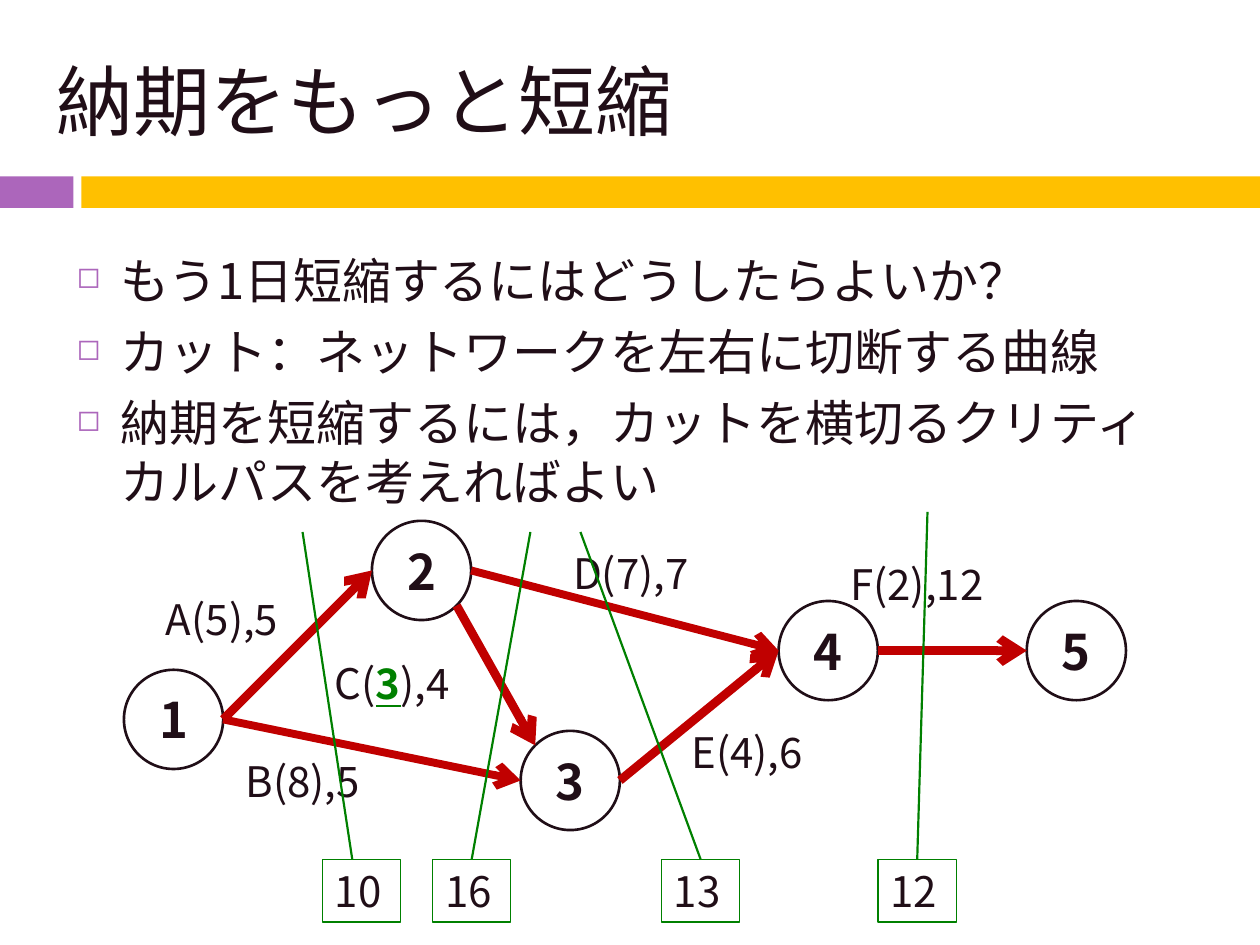
from math import cos, radians, sin

from lxml import etree
from pptx import Presentation
from pptx.dml.color import RGBColor
from pptx.enum.shapes import MSO_CONNECTOR, MSO_SHAPE
from pptx.enum.text import MSO_ANCHOR, MSO_AUTO_SIZE, PP_ALIGN
from pptx.oxml.ns import qn
from pptx.util import Pt

STRAIGHT = MSO_CONNECTOR.STRAIGHT
RECTANGLE, OVAL = MSO_SHAPE.RECTANGLE, MSO_SHAPE.OVAL
TOP, MIDDLE = MSO_ANCHOR.TOP, MSO_ANCHOR.MIDDLE
LEFT, CENTER = PP_ALIGN.LEFT, PP_ALIGN.CENTER
GROW = MSO_AUTO_SIZE.SHAPE_TO_FIT_TEXT

INK = RGBColor(0x20, 0x0E, 0x17)
PURPLE = RGBColor(0xAC, 0x66, 0xBB)
GOLD = RGBColor(0xFF, 0xC0, 0x00)
RED = RGBColor(0xC0, 0x00, 0x00)
GREEN = RGBColor(0x00, 0x80, 0x00)
FONT = "Noto Sans CJK JP"


def add_span(para, text, size, color=INK, **formats):
    span = para.add_run()
    span.text = text
    formats.update(name=FONT, size=Pt(size))
    for name, value in formats.items():
        setattr(span.font, name, value)
    span.font.color.rgb = color
    etree.SubElement(span.font._element, qn("a:ea"), typeface=FONT)


def add_line(start, end, color, width):
    line = page.shapes.add_connector(STRAIGHT, *(Pt(v) for v in (*start, *end)))
    line.line.color.rgb = color
    line.line.width = Pt(width)
    etree.SubElement(line._element.spPr, qn("a:effectLst"))
    return line


deck = Presentation()
deck.slide_width, deck.slide_height = Pt(720), Pt(540)
page = deck.slides.add_slide(deck.slide_layouts[6])

# Title and the band below it
for left, width, color in ((0, 42, PURPLE), (46.5, 673.5, GOLD)):
    band = page.shapes.add_shape(RECTANGLE, Pt(left), Pt(100.8), Pt(width), Pt(18))
    band.shadow.inherit = False
    band.fill.solid()
    band.fill.fore_color.rgb = color
    band.line.fill.background()

title = page.shapes.add_textbox(Pt(25.2), Pt(18), Pt(669), Pt(78)).text_frame
title.word_wrap = True
title.vertical_anchor = MIDDLE
add_span(title.paragraphs[0], "納期をもっと短縮", 44)

# Bullets
body = page.shapes.add_textbox(Pt(36.75), Pt(139.7), Pt(652.3), Pt(380)).text_frame
body.word_wrap = True
for index, text in enumerate((
    "もう1日短縮するにはどうしたらよいか？",
    "カット：ネットワークを左右に切断する曲線",
    "納期を短縮するには，カットを横切るクリティカルパスを考えればよい",
)):
    para = body.add_paragraph() if index else body.paragraphs[0]
    para.space_before = Pt(7)
    properties = para._p.get_or_add_pPr()
    properties.set("marL", str(Pt(25.2)))
    properties.set("indent", str(-Pt(25.2)))
    bullet_color = etree.SubElement(properties, qn("a:buClr"))
    etree.SubElement(bullet_color, qn("a:srgbClr"), val=str(PURPLE))
    etree.SubElement(properties, qn("a:buSzPct"), val="60000")
    etree.SubElement(properties, qn("a:buChar"), char="◻")
    add_span(para, text, 28)

# Network nodes, by centre
RADIUS = 28.35
NODES = {
    "1": (99.2, 411.1),
    "2": (240.9, 326),
    "3": (325.9, 446),
    "4": (473.3, 371.8),
    "5": (615.1, 371.8),
}
for name, (x, y) in NODES.items():
    node = page.shapes.add_shape(
        OVAL, Pt(x - RADIUS), Pt(y - RADIUS), Pt(2 * RADIUS), Pt(2 * RADIUS))
    node.shadow.inherit = False
    node.fill.background()
    node.line.color.rgb = INK
    node.line.width = Pt(1.5)
    node.text_frame.vertical_anchor = MIDDLE
    para = node.text_frame.paragraphs[0]
    para.alignment = CENTER
    add_span(para, name, 28, bold=True)

# Activities: from node, to node, leaving and arriving angle on the circle, width
for first, last, leave, arrive, width in (
    ("1", "2", 0, 180, 5),
    ("1", "3", 0, 180, 4.5),
    ("2", "3", 45, 225, 5),
    ("2", "4", 0, 180, 4.5),
    ("3", "4", 0, 180, 5),
    ("4", "5", 0, 180, 5),
):
    start, end = (
        (NODES[name][0] + RADIUS * cos(radians(angle)),
         NODES[name][1] + RADIUS * sin(radians(angle)))
        for name, angle in ((first, leave), (last, arrive)))
    arrow = add_line(start, end, RED, width)
    etree.SubElement(arrow.line._get_or_add_ln(), qn("a:tailEnd"), type="arrow")

PLAIN = {}
SHORTENED = {"color": GREEN, "bold": True, "underline": True}
for left, top, width, spans in (
    (87.8, 335.5, 90.7, [("A(5),5", PLAIN)]),
    (133.2, 428.4, 96.5, [("B(8),5", PLAIN)]),
    (184.3, 372.2, 96.5, [("C(", PLAIN), ("3", SHORTENED), ("),4", PLAIN)]),
    (320.4, 309.6, 108, [("D(7),7", PLAIN)]),
    (388.1, 411.8, 96.5, [("E(4),6", PLAIN)]),
    (478.8, 315.4, 113, [("F(2),12", PLAIN)]),
):
    label = page.shapes.add_textbox(Pt(left), Pt(top), Pt(width), Pt(36)).text_frame
    label.word_wrap = True
    label.auto_size = GROW
    for text, formats in spans:
        add_span(label.paragraphs[0], text, 24, **formats)

# Cuts: each line runs down to the box with its cost
BOX_TOP, BOX_WIDTH, BOX_HEIGHT = 491, 44.7, 36
for cost, left, start, foot in (
    ("10", 184.3, (172.9, 304), 201.3),
    ("16", 247.2, (303.1, 304), None),
    ("13", 378, (331.7, 304), None),
    ("12", 501.8, (530, 292.5), None),
):
    box = page.shapes.add_shape(
        RECTANGLE, Pt(left), Pt(BOX_TOP), Pt(BOX_WIDTH), Pt(BOX_HEIGHT))
    box.shadow.inherit = False
    box.fill.background()
    box.line.color.rgb = GREEN
    box.line.width = Pt(0.75)
    frame = box.text_frame
    frame.word_wrap = False
    frame.auto_size = GROW
    frame.vertical_anchor = TOP
    frame.paragraphs[0].alignment = LEFT
    add_span(frame.paragraphs[0], cost, 24)
    cut = add_line(start, (foot or left + BOX_WIDTH / 2, BOX_TOP), GREEN, 1.25)
    if foot is None:
        cut.end_connect(box, 0)

deck.save("out.pptx")
